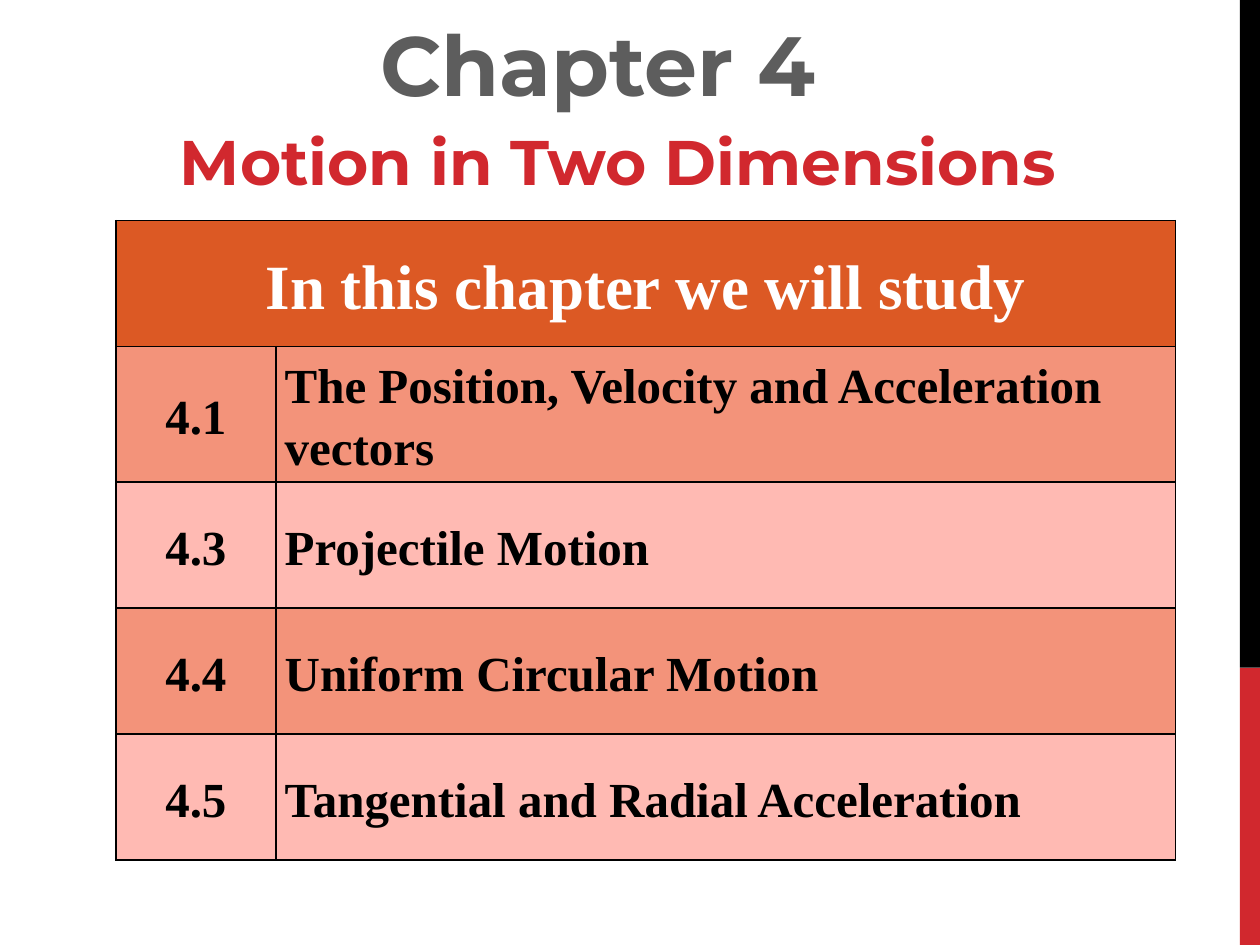
import pptx
import pptx.util
import pptx.dml.color
import pptx.enum.shapes
import pptx.enum.text
import pptx.oxml.ns
import lxml.etree

Inches = pptx.util.Inches
ALIGN = pptx.enum.text.PP_ALIGN
MIDDLE = pptx.enum.text.MSO_ANCHOR.MIDDLE

COLORS = {
    "black": "000000",
    "white": "FFFFFF",
    "red": "D1282E",
    "gray": "5D5D5D",
    "head": "DC5924",
    "dark": "F3937A",
    "light": "FFBAB3",
}
TOPICS = [
    ("4.1", "The Position, Velocity and Acceleration vectors"),
    ("4.3", "Projectile Motion"),
    ("4.4", "Uniform Circular Motion"),
    ("4.5", "Tangential and Radial Acceleration"),
]


def color(name):
    return pptx.dml.color.RGBColor.from_string(COLORS[name])


def write(frame, text, size, font, tint, align):
    para = frame.paragraphs[0]
    para.alignment = align
    run = para.add_run()
    run.text = text
    run.font.size = pptx.util.Pt(size)
    run.font.name = font
    run.font.bold = True
    run.font.color.rgb = color(tint)
    return para


def add_bar(slide, top, height, tint):
    bar = slide.shapes.add_shape(
        pptx.enum.shapes.MSO_SHAPE.RECTANGLE,
        Inches(9.84), Inches(top), Inches(0.16), Inches(height))
    bar.shadow.inherit = False
    bar.fill.solid()
    bar.fill.fore_color.rgb = color(tint)
    bar.line.fill.background()


def add_title(slide, text):
    title = slide.shapes.title
    title.left, title.top = Inches(2.33), Inches(0.04)
    title.width, title.height = Inches(4.83), Inches(0.92)
    title.text_frame.vertical_anchor = MIDDLE
    write(title.text_frame, text, 48, "Montserrat", "gray", ALIGN.CENTER)


def add_sub(slide, text):
    box = slide.shapes.add_textbox(
        Inches(1.33), Inches(0.92), Inches(7.5), Inches(1))
    box.text_frame.word_wrap = True
    write(box.text_frame, text, 36, "Montserrat", "red", ALIGN.LEFT)


def add_edges(cell):
    props = cell._tc.get_or_add_tcPr()
    qn = pptx.oxml.ns.qn
    for spot, side in enumerate(("a:lnL", "a:lnR", "a:lnT", "a:lnB")):
        line = lxml.etree.Element(qn(side), w=str(pptx.util.Pt(1)))
        fill = lxml.etree.SubElement(line, qn("a:solidFill"))
        lxml.etree.SubElement(fill, qn("a:srgbClr"), val=COLORS["black"])
        props.insert(spot, line)


def style_cell(cell, tint):
    cell.fill.solid()
    cell.fill.fore_color.rgb = color(tint)
    cell.vertical_anchor = MIDDLE
    cell.margin_left = cell.margin_right = Inches(0.07)
    cell.margin_top = cell.margin_bottom = 0
    add_edges(cell)


def fill_cell(cell, text, size, tint, align):
    para = write(cell.text_frame, text, size, "Times New Roman", tint, align)
    para.line_spacing = 1.15


def add_topics(slide):
    count = len(TOPICS) + 1
    table = slide.shapes.add_table(
        count, 2, Inches(0.92), Inches(1.75),
        Inches(8.41), Inches(count)).table
    table.columns[0].width = Inches(1.27)
    table.columns[1].width = Inches(7.14)

    # Header across both columns
    for cell in table.rows[0].cells:
        style_cell(cell, "head")
    head = table.cell(0, 0)
    head.merge(table.cell(0, 1))
    fill_cell(head, "In this chapter we will study", 36, "white", ALIGN.CENTER)

    # Topic rows in alternating bands
    for row, topic in enumerate(TOPICS, 1):
        band = "dark" if row % 2 else "light"
        for col, align in enumerate((ALIGN.CENTER, ALIGN.LEFT)):
            cell = table.cell(row, col)
            style_cell(cell, band)
            fill_cell(cell, topic[col], 28, "black", align)


def main():
    deck = pptx.Presentation()
    deck.slide_width, deck.slide_height = Inches(10), Inches(7.5)
    slide = deck.slides.add_slide(deck.slide_layouts[5])

    # Side bars
    add_bar(slide, 5.3, 2.2, "red")
    add_bar(slide, 0, 5.3, "black")

    # Headings and contents
    add_title(slide, "Chapter 4")
    add_sub(slide, "Motion in Two Dimensions")
    add_topics(slide)
    deck.save("out.pptx")


if __name__ == "__main__":
    main()
